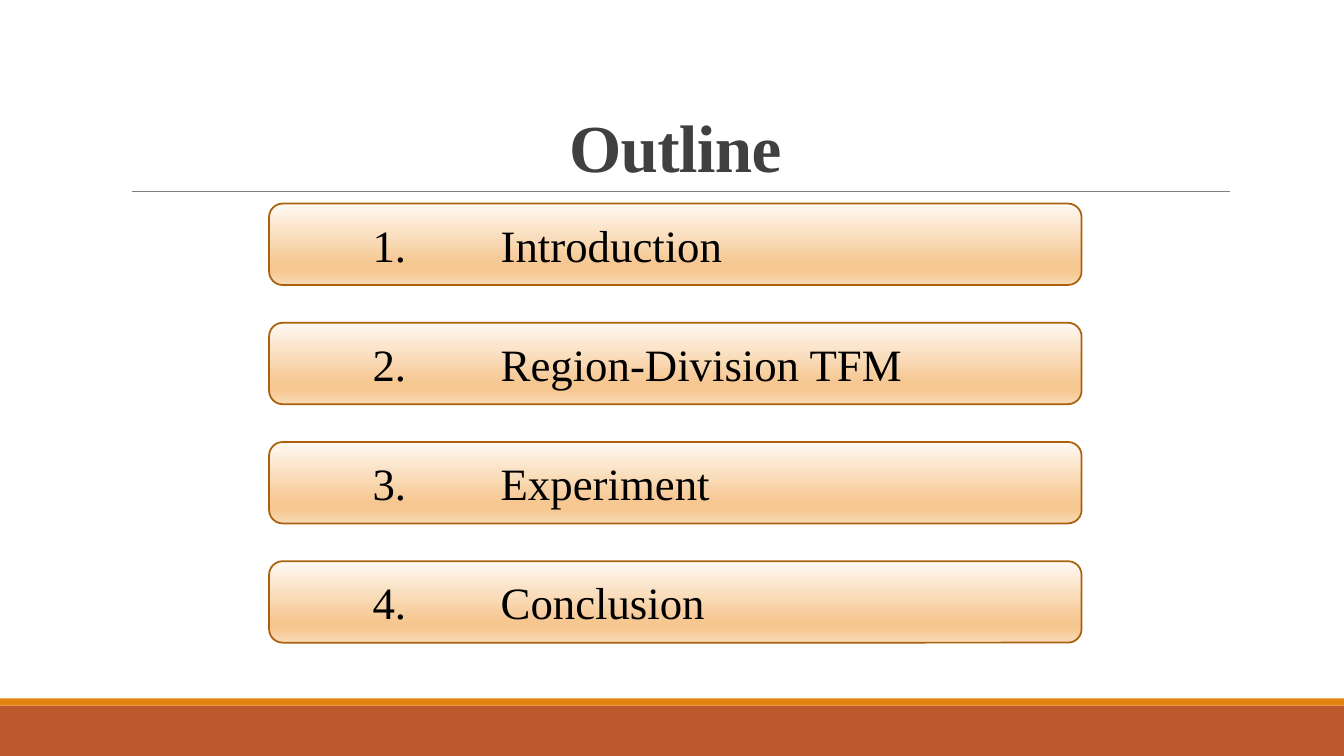
from dataclasses import dataclass

from lxml.etree import SubElement
from pptx import Presentation
from pptx.dml.color import RGBColor
from pptx.enum.shapes import MSO_CONNECTOR, MSO_SHAPE
from pptx.enum.text import MSO_ANCHOR, PP_ALIGN
from pptx.oxml.ns import qn
from pptx.util import Pt


@dataclass(frozen=True)
class Theme:
    font: str = "Times New Roman"
    title_size: int = 48
    item_size: int = 32
    title_color: str = "404040"
    item_color: str = "000000"
    footer: str = "BD582C"
    accent: str = "E48312"
    rule: str = "808080"
    bar_line: str = "A9610D"
    bar_stops: tuple = ((0, "FEF9F3"), (74, "F6C791"), (83, "F6C791"), (100, "F9DAB6"))


theme = Theme()


def write_text(shape, text, *, size, color, bold=False, align=PP_ALIGN.LEFT,
               anchor=MSO_ANCHOR.MIDDLE, line_spacing=None, tracking=0, tabs=()):
    frame = shape.text_frame
    frame.word_wrap = True
    frame.vertical_anchor = anchor
    paragraph = frame.paragraphs[0]
    paragraph.alignment = align
    paragraph.line_spacing = line_spacing
    run = paragraph.add_run()
    run.text = text
    run.font.name = theme.font
    run.font.size = Pt(size)
    run.font.bold = bold
    run.font.color.rgb = RGBColor.from_string(color)
    if tracking:
        run.font._element.set("spc", str(round(tracking * 100)))
    if tabs:
        tab_list = SubElement(paragraph._p.get_or_add_pPr(), qn("a:tabLst"))
        for position in tabs:
            SubElement(tab_list, qn("a:tab"), pos=str(Pt(position)), algn="l")


def fill_gradient(shape, stops, angle):
    shape.fill.gradient()
    gradient = shape._element.spPr.find(qn("a:gradFill"))
    for child in list(gradient):
        gradient.remove(child)
    stop_list = SubElement(gradient, qn("a:gsLst"))
    for percent, color in stops:
        stop = SubElement(stop_list, qn("a:gs"), pos=str(percent * 1000))
        SubElement(stop, qn("a:srgbClr"), val=color)
    SubElement(gradient, qn("a:lin"), ang=str(angle * 60000), scaled="0")


presentation = Presentation()
presentation.slide_width = Pt(960)
presentation.slide_height = Pt(540)
slide = presentation.slides.add_slide(presentation.slide_layouts[6])
shapes = slide.shapes

for top, height, color in ((504, 36, theme.footer), (498.8, 5.2, theme.accent)):
    band = shapes.add_shape(MSO_SHAPE.RECTANGLE, 0, Pt(top), Pt(960), Pt(height))
    band.shadow.inherit = False
    band.fill.solid()
    band.fill.fore_color.rgb = RGBColor.from_string(color)
    band.line.fill.background()

rule = shapes.add_connector(MSO_CONNECTOR.STRAIGHT, Pt(94.3), Pt(136.6), Pt(878.8), Pt(136.6))
rule.line.color.rgb = RGBColor.from_string(theme.rule)
rule.line.width = Pt(0.5)
SubElement(rule._element.spPr, qn("a:effectLst"))

title = shapes.add_textbox(Pt(86.4), Pt(22.6), Pt(792), Pt(114.2))
write_text(title, "Outline", size=theme.title_size, color=theme.title_color, bold=True,
           align=PP_ALIGN.CENTER, anchor=MSO_ANCHOR.BOTTOM, line_spacing=0.85, tracking=-0.5)

topics = ("Introduction", "Region-Division TFM", "Experiment", "Conclusion")
bar_top, bar_pitch = 145.4, 85.15

for index, topic in enumerate(topics):
    bar = shapes.add_shape(MSO_SHAPE.ROUNDED_RECTANGLE, Pt(192.2), Pt(bar_top + index * bar_pitch),
                           Pt(580.4), Pt(58.2))
    bar.shadow.inherit = False
    fill_gradient(bar, theme.bar_stops, 90)
    bar.line.color.rgb = RGBColor.from_string(theme.bar_line)
    bar.line.width = Pt(1.25)
    write_text(bar, f"\t{index + 1}.\t{topic}", size=theme.item_size, color=theme.item_color,
               tabs=(64, 155.5))

presentation.save("out.pptx")
